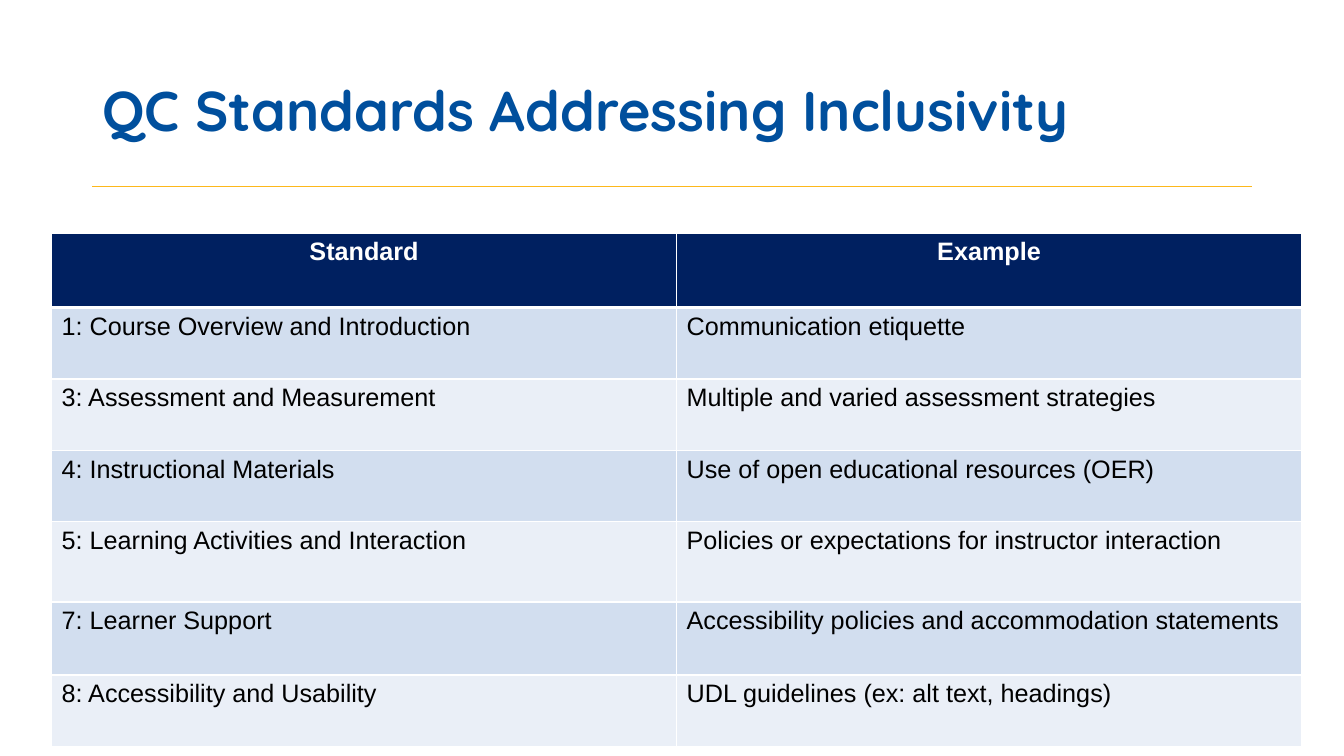
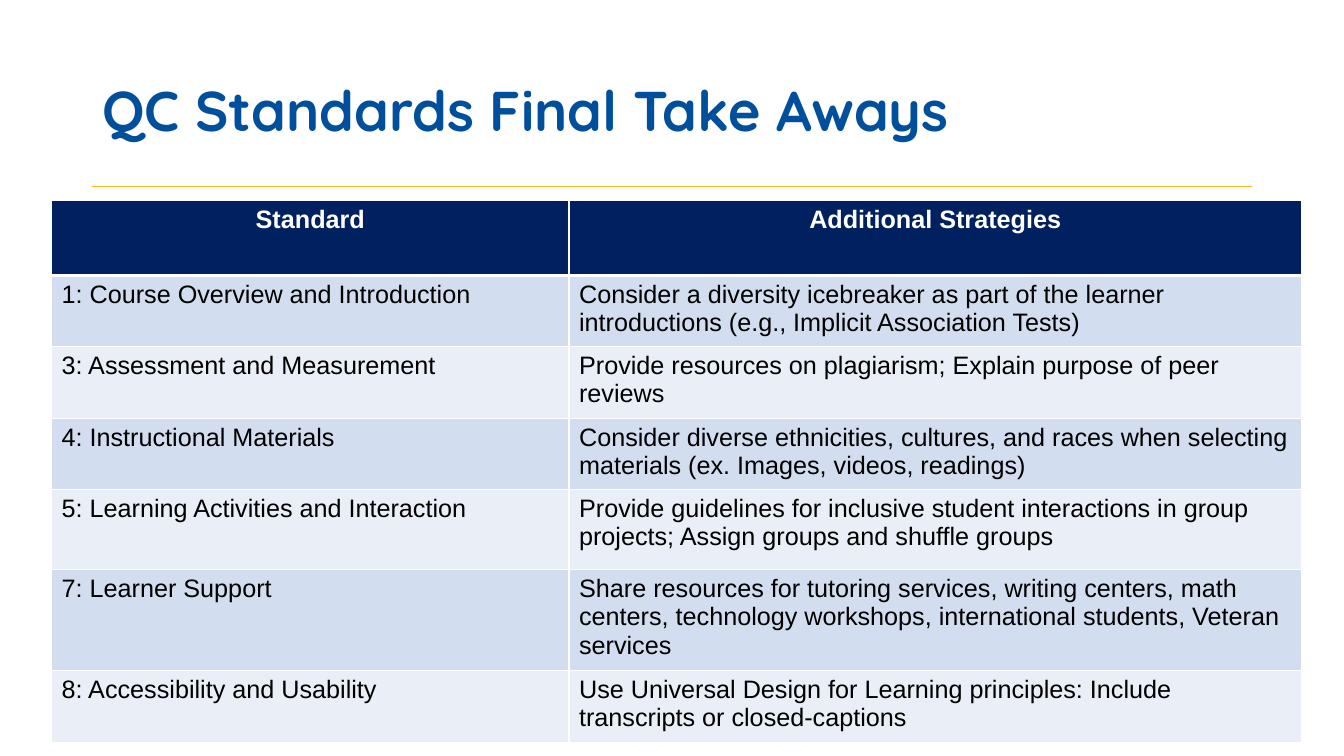
from collections import namedtuple

import lxml.etree
import pptx
import pptx.dml.color
import pptx.enum.shapes
import pptx.enum.text
import pptx.oxml.ns
import pptx.util

Cm = pptx.util.Cm
Pt = pptx.util.Pt
Box = namedtuple("Box", "left top width height")

COLORS = {
    "title": "004F9D",
    "rule": "FDB81B",
    "header": "002060",
    "band_dark": "D2DEEF",
    "band_light": "EAEFF7",
    "white": "FFFFFF",
    "text": "000000",
}
TITLE_FONT = "Quicksand"
BODY_FONT = "Arial"
TITLE_BOX = Box(2.33, 1.01, 29.21, 3.68)
TABLE_LEFT, TABLE_WIDTH = 1.3, 31.5

STANDARDS = [
    "1: Course Overview and Introduction",
    "3: Assessment and Measurement",
    "4: Instructional Materials",
    "5: Learning Activities and Interaction",
    "7: Learner Support",
    "8: Accessibility and Usability",
]
EXAMPLES = [
    "Communication etiquette",
    "Multiple and varied assessment strategies",
    "Use of open educational resources (OER)",
    "Policies or expectations for instructor interaction",
    "Accessibility policies and accommodation statements",
    "UDL guidelines (ex: alt text, headings)",
]
STRATEGIES = [
    "Consider a diversity icebreaker as part of the learner introductions "
    "(e.g., Implicit Association Tests)",
    "Provide resources on plagiarism; Explain purpose of peer reviews",
    "Consider diverse ethnicities, cultures, and races when selecting "
    "materials (ex. Images, videos, readings)",
    "Provide guidelines for inclusive student interactions in group projects; "
    "Assign groups and shuffle groups",
    "Share resources for tutoring services, writing centers, math centers, "
    "technology workshops, international students, Veteran services",
    "Use Universal Design for Learning principles: Include transcripts or "
    "closed-captions",
]


def color(name):
    return pptx.dml.color.RGBColor.from_string(COLORS[name])


def format_text(paragraph, font_name, size, color_name, bold):
    for span in paragraph.runs:
        span.font.name = font_name
        span.font.size = Pt(size)
        span.font.bold = bold
        span.font.color.rgb = color(color_name)


def add_child(parent, tag, **attributes):
    return lxml.etree.SubElement(parent, pptx.oxml.ns.qn(tag), **attributes)


def add_borders(cell, top, bottom):
    """Draw white cell borders; top and bottom widths are in points."""
    properties = cell._tc.get_or_add_tcPr()
    for side, width in (("L", 1), ("R", 1), ("T", top), ("B", bottom)):
        border = add_child(properties, f"a:ln{side}", w=str(Pt(width)))
        fill = add_child(border, "a:solidFill")
        add_child(fill, "a:srgbClr", val=COLORS["white"])


def add_title(page, box, text):
    # Title
    title = page.shapes.add_textbox(*map(Cm, box))
    frame = title.text_frame
    frame.word_wrap = True
    frame.vertical_anchor = pptx.enum.text.MSO_ANCHOR.MIDDLE
    frame.text = text
    paragraph = frame.paragraphs[0]
    paragraph.line_spacing = 0.9
    format_text(paragraph, TITLE_FONT, 40, "title", True)

    # Rule along the bottom of the title
    bottom = Cm(box.top + box.height)
    rule = page.shapes.add_connector(
        pptx.enum.shapes.MSO_CONNECTOR.STRAIGHT,
        Cm(box.left), bottom, Cm(box.left + box.width), bottom)
    rule.line.color.rgb = color("rule")
    rule.line.width = Pt(0.5)
    add_child(rule._element.spPr, "a:effectLst")


def fill_cell(cell, text, row):
    is_header = row == 0
    add_borders(cell, top=3 if row == 1 else 1, bottom=3 if is_header else 1)
    band = "header" if is_header else ("band_light", "band_dark")[row % 2]
    cell.fill.solid()
    cell.fill.fore_color.rgb = color(band)
    cell.text_frame.text = text
    paragraph = cell.text_frame.paragraphs[0]
    if is_header:
        paragraph.alignment = pptx.enum.text.PP_ALIGN.CENTER
    format_text(paragraph, BODY_FONT, 18,
                "white" if is_header else "text", is_header)


def add_standards_table(page, box, rows, first_width, row_heights):
    table = page.shapes.add_table(len(rows), 2, *map(Cm, box)).table
    table.horz_banding = False
    for column, width in zip(table.columns,
                             (first_width, box.width - first_width)):
        column.width = Cm(width)
    for index, (values, height) in enumerate(zip(rows, row_heights)):
        table.rows[index].height = Cm(height)
        for column, text in enumerate(values):
            fill_cell(table.cell(index, column), text, index)


def add_standards_page(deck, title, heading, details, table_top,
                       first_width, support_height):
    page = deck.slides.add_slide(deck.slide_layouts[6])
    add_title(page, TITLE_BOX, title)
    rows = [("Standard", heading), *zip(STANDARDS, details)]
    row_heights = [1.88, 1.8, 1.8, 1.8, 2.02, support_height, 1.8]
    box = Box(TABLE_LEFT, table_top, TABLE_WIDTH, sum(row_heights))
    add_standards_table(page, box, rows, first_width, row_heights)


def main():
    deck = pptx.Presentation()
    deck.slide_width, deck.slide_height = Cm(33.87), Cm(19.05)
    add_standards_page(deck, "QC Standards Addressing Inclusivity", "Example",
                       EXAMPLES, table_top=5.87,
                       first_width=TABLE_WIDTH / 2, support_height=1.84)
    add_standards_page(deck, "QC Standards Final Take Aways",
                       "Additional Strategies", STRATEGIES, table_top=5.06,
                       first_width=13.04, support_height=2.37)
    deck.save("out.pptx")


if __name__ == "__main__":
    main()
